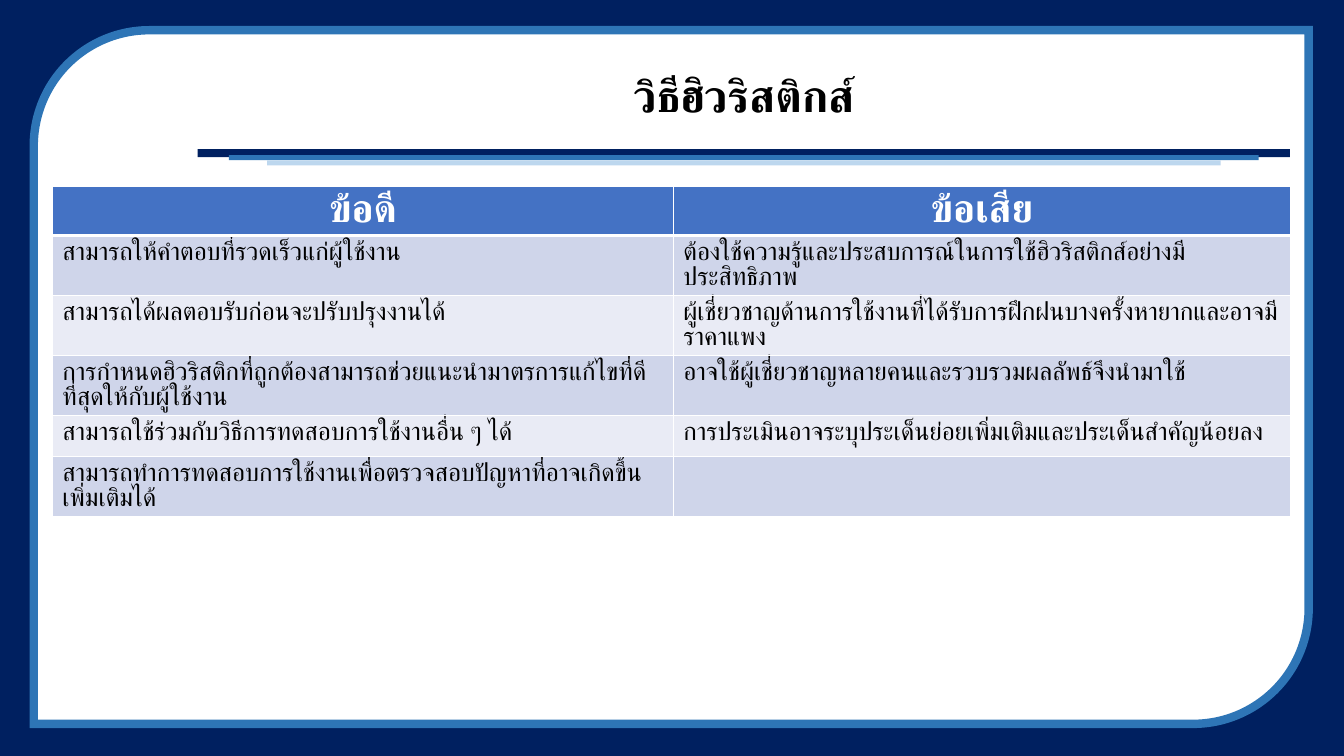
import pptx
import pptx.util
import pptx.dml.color
import pptx.enum.shapes
import pptx.enum.text
import pptx.oxml
import pptx.oxml.ns

Cm = pptx.util.Cm
Pt = pptx.util.Pt
RGBColor = pptx.dml.color.RGBColor
SHAPE = pptx.enum.shapes.MSO_SHAPE
ALIGN = pptx.enum.text.PP_ALIGN

NAVY = RGBColor(0x00, 0x20, 0x60)
BLUE = RGBColor(0x2E, 0x75, 0xB6)
PALE_BLUE = RGBColor(0xBD, 0xD7, 0xEE)
HEADER_BLUE = RGBColor(0x44, 0x72, 0xC4)
BAND_DARK = RGBColor(0xCF, 0xD5, 0xEA)
BAND_LIGHT = RGBColor(0xE9, 0xEB, 0xF5)
WHITE = RGBColor(0xFF, 0xFF, 0xFF)
BLACK = RGBColor(0x00, 0x00, 0x00)

PROS_AND_CONS = [
    ("ข้อดี", "ข้อเสีย"),
    ("สามารถให้คำตอบที่รวดเร็วแก่ผู้ใช้งาน",
     "ต้องใช้ความรู้และประสบการณ์ในการใช้ฮิวริสติกส์อย่างมีประสิทธิภาพ"),
    ("สามารถได้ผลตอบรับก่อนจะปรับปรุงงานได้",
     "ผู้เชี่ยวชาญด้านการใช้งานที่ได้รับการฝึกฝนบางครั้งหายากและอาจมีราคาแพง"),
    ("การกำหนดฮิวริสติกที่ถูกต้องสามารถช่วยแนะนำมาตรการแก้ไขที่ดีที่สุดให้กับผู้ใช้งาน",
     "อาจใช้ผู้เชี่ยวชาญหลายคนและรวบรวมผลลัพธ์จึงนำมาใช้"),
    ("สามารถใช้ร่วมกับวิธีการทดสอบการใช้งานอื่น ๆ ได้",
     "การประเมินอาจระบุประเด็นย่อยเพิ่มเติมและประเด็นสำคัญน้อยลง"),
    ("สามารถทำการทดสอบการใช้งานเพื่อตรวจสอบปัญหาที่อาจเกิดขึ้นเพิ่มเติมได้", ""),
]


class SlideBuilder:
    font_name = "Arial"
    table_leading = 0.99  # exact line height per point of text size

    def __init__(self, slide):
        self.slide = slide

    def panel(self, kind, left, top, width, height, fill, line=None, line_width=0):
        panel = self.slide.shapes.add_shape(
            kind, Cm(left), Cm(top), Cm(width), Cm(height))
        panel.shadow.inherit = False
        panel.fill.solid()
        panel.fill.fore_color.rgb = fill
        if line is None:
            panel.line.fill.background()
        else:
            panel.line.color.rgb = line
            panel.line.width = Pt(line_width)
            # Sharp outline corners
            panel.line._get_or_add_ln().append(pptx.oxml.parse_xml(
                f'<a:miter {pptx.oxml.ns.nsdecls("a")} lim="800000"/>'))
        return panel

    def style(self, paragraph, size, color, bold, align):
        paragraph.alignment = align
        paragraph.font.name = self.font_name
        paragraph.font.size = Pt(size)
        paragraph.font.bold = bold
        paragraph.font.color.rgb = color

    def title(self, text, left, top, width, height):
        frame = self.slide.shapes.add_textbox(
            Cm(left), Cm(top), Cm(width), Cm(height)).text_frame
        frame.word_wrap = True
        frame.vertical_anchor = pptx.enum.text.MSO_ANCHOR.MIDDLE
        heading = frame.paragraphs[0]
        heading.text = text
        heading.line_spacing = 0.9
        self.style(heading, 32, BLACK, True, ALIGN.CENTER)

    def borders(self, cell, widths):
        """Draw white borders; widths are points for left, right, top, bottom."""
        properties = cell._tc.get_or_add_tcPr()
        for position, (side, width) in enumerate(zip("LRTB", widths)):
            properties.insert(position, pptx.oxml.parse_xml(
                f'<a:ln{side} {pptx.oxml.ns.nsdecls("a")} w="{Pt(width)}">'
                f'<a:solidFill><a:srgbClr val="{WHITE}"/></a:solidFill></a:ln{side}>'))

    def table(self, rows, left, top, column_widths, row_height):
        table = self.slide.shapes.add_table(
            len(rows), len(column_widths), Cm(left), Cm(top),
            Cm(sum(column_widths)), Cm(row_height * len(rows))).table
        for column, width in zip(table.columns, column_widths):
            column.width = Cm(width)
        for r, texts in enumerate(rows):
            for c, text in enumerate(texts):
                cell = table.cell(r, c)
                cell.text = text
                cell.fill.solid()
                entry = cell.text_frame.paragraphs[0]
                if r == 0:
                    cell.fill.fore_color.rgb = HEADER_BLUE
                    self.style(entry, 28, WHITE, True, ALIGN.CENTER)
                else:
                    cell.fill.fore_color.rgb = BAND_DARK if r % 2 else BAND_LIGHT
                    self.style(entry, 18, BLACK, False, ALIGN.LEFT)
                entry.line_spacing = Pt(entry.font.size.pt * self.table_leading)
                self.borders(cell, (1, 1, 3 if r == 1 else 1, 3 if r == 0 else 1))


def main():
    deck = pptx.Presentation()
    deck.slide_width, deck.slide_height = Cm(33.87), Cm(19.05)
    builder = SlideBuilder(deck.slides.add_slide(deck.slide_layouts[6]))

    # Navy backdrop and rounded white page
    builder.panel(SHAPE.RECTANGLE, 0, 0, 33.87, 19.05, NAVY)
    page = builder.panel(SHAPE.ROUND_2_DIAG_RECTANGLE, 0.85, 0.76, 32.13, 17.48,
                         WHITE, BLUE, 6)
    page.rotation = 180

    # Stepped rule under the title
    for left, top, width, height, color in [
        (4.98, 3.76, 27.53, 0.2, NAVY),
        (5.77, 3.91, 25.95, 0.13, BLUE),
        (6.73, 4.04, 24.03, 0.13, PALE_BLUE),
    ]:
        builder.panel(SHAPE.RECTANGLE, left, top, width, height, color)

    # Title
    builder.title("วิธีฮิวริสติกส์", 4.98, 1.24, 27.53, 2.46)

    # Pros and cons
    builder.table(PROS_AND_CONS, 1.32, 4.7, (15.65, 15.55), 1.04)

    deck.save("out.pptx")


if __name__ == "__main__":
    main()
